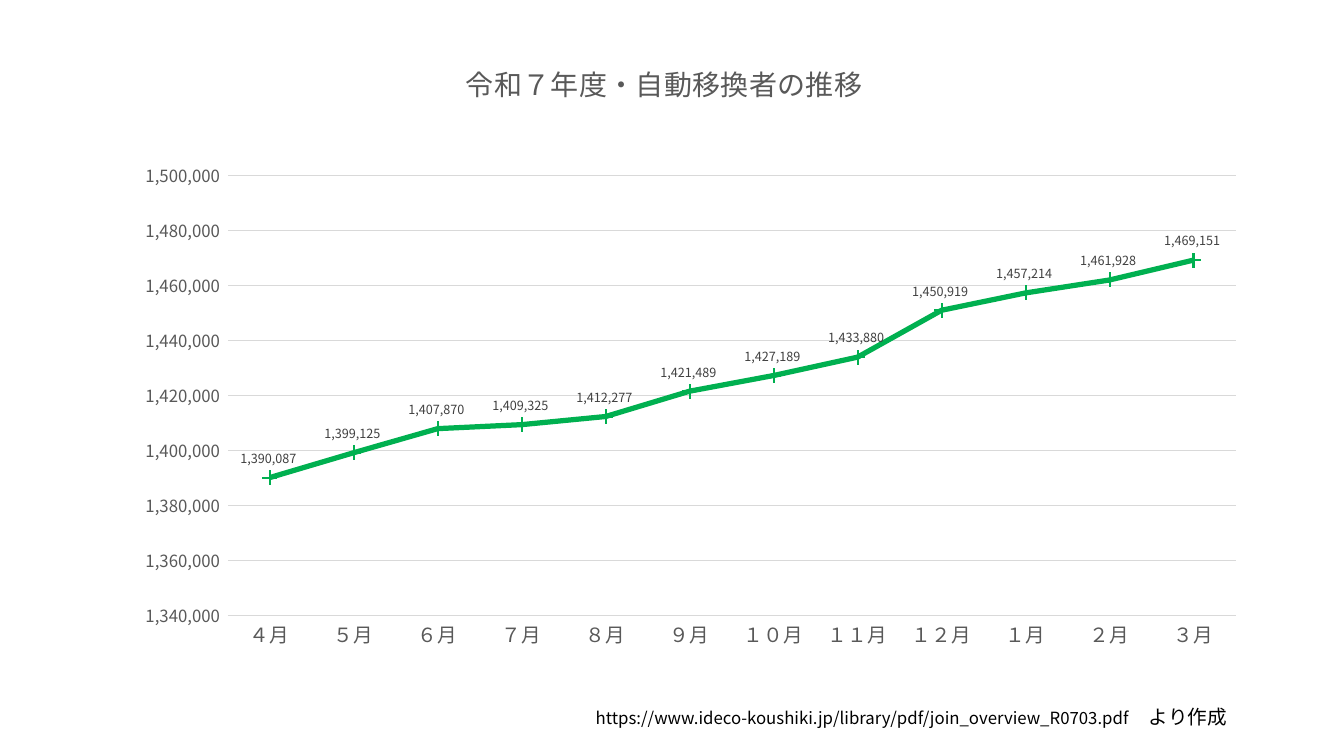
from typing import Any, NamedTuple

from lxml.etree import SubElement
from pptx import Presentation
from pptx.chart.data import CategoryChartData as ChartData
from pptx.dml.color import RGBColor as RGB
from pptx.enum.chart import XL_CHART_TYPE as ChartType
from pptx.enum.chart import XL_LABEL_POSITION as LabelPos
from pptx.enum.chart import XL_MARKER_STYLE as Marker
from pptx.enum.chart import XL_TICK_MARK as Tick
from pptx.oxml import parse_xml
from pptx.oxml.ns import nsdecls, qn
from pptx.util import Inches, Pt

FONT = "Noto Sans CJK JP"
NUM_FMT = r"#,##0_);[Red]\(#,##0\)"
COLORS = {"line": "00B050", "grid": "D9D9D9", "axis": "595959",
          "label": "404040", "text": "000000"}


class Month(NamedTuple):
    name: str
    count: int


class TextPart(NamedTuple):
    text: str
    size: float


MONTHS = [
    Month("４月", 1390087), Month("５月", 1399125), Month("６月", 1407870),
    Month("７月", 1409325), Month("８月", 1412277), Month("９月", 1421489),
    Month("１０月", 1427189), Month("１１月", 1433880), Month("１２月", 1450919),
    Month("１月", 1457214), Month("２月", 1461928), Month("３月", 1469151),
]
SOURCE = [
    TextPart("https://www.ideco-koushiki.jp/library/pdf/join_overview_R0703.pdf", 12),
    TextPart("　より作成", 14),
]
VALUE_AXIS = {"minimum_scale": 1340000, "maximum_scale": 1500000,
              "major_unit": 20000, "has_major_gridlines": True}
LABELS = {"show_value": True, "position": LabelPos.ABOVE}


def set_attrs(obj: Any, values: dict[str, Any]) -> None:
    """Set each named attribute on an object."""
    for name, value in values.items():
        setattr(obj, name, value)


def style_font(font: Any, size: float, color: str) -> None:
    """Give a font its face, size and colour."""
    set_attrs(font, {"name": FONT, "size": Pt(size), "bold": False})
    font.color.rgb = RGB.from_string(COLORS[color])


def style_line(line: Any, width: float, color: str) -> None:
    """Give a line its width and colour."""
    line.width = Pt(width)
    line.color.rgb = RGB.from_string(COLORS[color])


def set_number_format(obj: Any) -> None:
    """Show thousands separators on an axis or its labels."""
    set_attrs(obj, {"number_format": NUM_FMT, "number_format_is_linked": False})


def add_east_asian(root: Any) -> None:
    """Repeat every Latin typeface for East Asian text."""
    for latin in list(root.iter(qn("a:latin"))):
        latin.addnext(parse_xml(f'<a:ea {nsdecls("a")} typeface="{FONT}"/>'))


def place(parent: Any, index: int, values: dict[str, Any]) -> None:
    """Give a chart part a manual layout in fractions of the chart."""
    for old in parent.findall(qn("c:layout")):
        parent.remove(old)
    layout = parse_xml(f'<c:layout {nsdecls("c")}/>')
    manual = SubElement(layout, qn("c:manualLayout"))
    for name, value in values.items():
        SubElement(manual, qn(f"c:{name}")).set("val", str(value))
    parent.insert(index, layout)


def style_axes(chart: Any) -> None:
    """Format the month axis and the count axis."""
    for axis, size in ((chart.category_axis, 14), (chart.value_axis, 12)):
        set_attrs(axis, {"major_tick_mark": Tick.NONE, "minor_tick_mark": Tick.NONE})
        style_font(axis.tick_labels.font, size, "axis")
    style_line(chart.category_axis.format.line, 0.75, "grid")
    set_attrs(chart.value_axis, VALUE_AXIS)
    chart.value_axis.format.line.fill.background()
    style_line(chart.value_axis.major_gridlines.format.line, 0.75, "grid")
    set_number_format(chart.value_axis.tick_labels)


def style_series(s: Any) -> None:
    """Format the line, its markers and its value labels."""
    s.smooth = False
    style_line(s.format.line, 3.75, "line")
    set_attrs(s.marker, {"style": Marker.PLUS, "size": 10})
    s.marker.format.fill.background()
    style_line(s.marker.format.line, 0.75, "line")
    set_attrs(s.data_labels, LABELS)
    set_number_format(s.data_labels)
    style_font(s.data_labels.font, 9, "label")


def add_trend_chart(slide: Any) -> None:
    """Add the monthly line chart with its title."""
    data = ChartData(number_format="#,##0")
    data.categories = [m.name for m in MONTHS]
    data.add_series("自動移換者", [m.count for m in MONTHS])
    chart = slide.shapes.add_chart(
        ChartType.LINE_MARKERS, Inches(0.62), Inches(0.27),
        Inches(11.97), Inches(6.77), data).chart
    chart.has_legend = False
    style_font(chart.font, 10, "text")
    title = chart.chart_title
    title.include_in_layout = False
    p = title.text_frame.paragraphs[0]
    r = p.add_run()
    r.text = "令和７年度・自動移換者の推移"
    style_font(r.font, 20, "axis")
    style_axes(chart)
    chart.plots[0].vary_by_categories = False
    style_series(chart.plots[0].series[0])
    root = chart.element
    place(root.find(".//" + qn("c:title")), 1,
          {"xMode": "edge", "yMode": "edge", "x": 0.33, "y": 0.04})
    place(root.find(".//" + qn("c:plotArea")), 0,
          {"layoutTarget": "inner", "xMode": "edge", "yMode": "edge",
           "x": 0.137, "y": 0.217, "w": 0.835, "h": 0.645})
    add_east_asian(root)


def add_source(slide: Any) -> None:
    """Add the source line under the chart."""
    sp = slide.shapes.add_textbox(Inches(5.81), Inches(6.94), Inches(7.52), Inches(0.4))
    tf = sp.text_frame
    tf.word_wrap = True
    p = tf.paragraphs[0]
    for part in SOURCE:
        r = p.add_run()
        r.text = part.text
        style_font(r.font, part.size, "text")
    add_east_asian(p._p)


def main() -> None:
    """Build and save the slide."""
    prs = Presentation()
    set_attrs(prs, {"slide_width": Inches(13.33), "slide_height": Inches(7.5)})
    slide = prs.slides.add_slide(prs.slide_layouts[6])
    add_source(slide)
    add_trend_chart(slide)
    prs.save("out.pptx")


if __name__ == "__main__":
    main()
